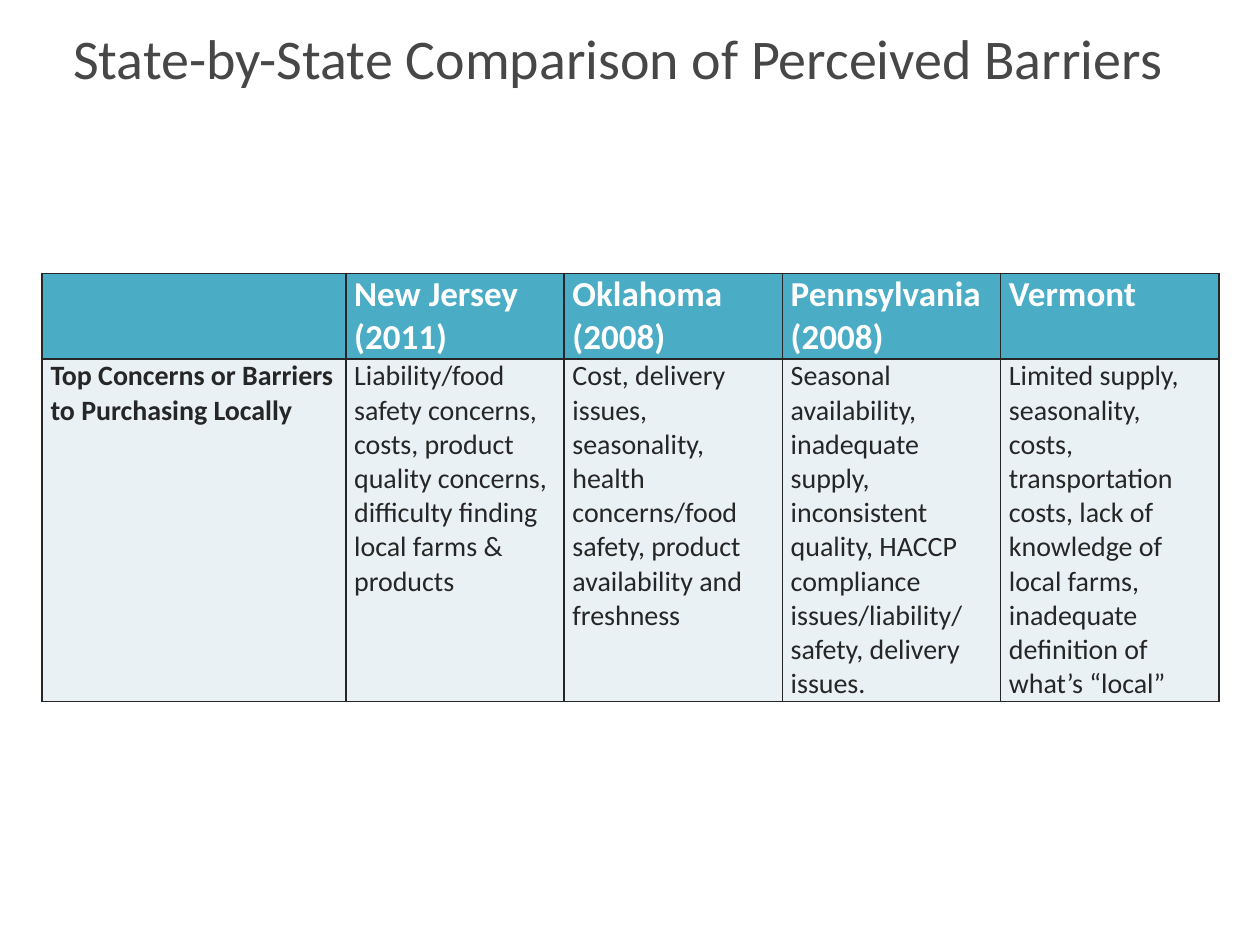
from lxml.etree import SubElement as Sub
from pptx import Presentation
from pptx.dml.color import RGBColor
from pptx.enum.text import MSO_ANCHOR as Anchor, PP_ALIGN as Align
from pptx.oxml.ns import qn
from pptx.util import Cm, Pt

TITLE = "State-by-State Comparison of Perceived Barriers"
HEADS = ["", "New Jersey (2011)", "Oklahoma (2008)", "Pennsylvania (2008)", "Vermont"]
BODY = [
    "Top Concerns or Barriers to Purchasing Locally",
    "Liability/food safety concerns, costs, product quality concerns, "
    "difficulty finding local farms & products",
    "Cost, delivery issues, seasonality, health concerns/food safety, "
    "product availability and freshness",
    "Seasonal availability, inadequate supply, inconsistent quality, "
    "HACCP compliance issues/liability/\nsafety, delivery issues.",
    "Limited supply, seasonality, costs, transportation costs, lack of knowledge "
    "of local farms, inadequate definition of what’s “local”",
]
ROWS = [
    dict(texts=HEADS, high=1.72, fill="4BACC6", ink="FFFFFF", size=20, bold=5),
    dict(texts=BODY, high=6.9, fill="E9F1F5", ink="262626", size=16, bold=1),
]
WIDTHS = [6.12] + [4.4] * 4
EDGE = "262626"


def paint(format, color):
    format.fill.solid()
    format.fill.fore_color.rgb = RGBColor.from_string(color)


def write(frame, text, size, color, bold=False):
    for i, line in enumerate(text.split("\n")):
        para = frame.add_paragraph() if i else frame.paragraphs[0]
        para.alignment = Align.LEFT
        para.font.size = Pt(size)
        run = para.add_run()
        run.text = line
        font = run.font
        font.name, font.size, font.bold = "Calibri", Pt(size), bold
        font.color.rgb = RGBColor.from_string(color)


def border(cell):
    props = cell._tc.get_or_add_tcPr()
    for side in ("lnL", "lnR", "lnT", "lnB"):
        line = Sub(props, qn("a:" + side), w=str(Pt(1)))
        Sub(Sub(line, qn("a:solidFill")), qn("a:srgbClr"), val=EDGE)


def main():
    """Build the slide comparing purchasing barriers by state."""
    deck = Presentation()
    deck.slide_width, deck.slide_height = Cm(25.4), Cm(19.05)
    slide = deck.slides.add_slide(deck.slide_layouts[5])

    title = slide.shapes.title
    title.left, title.top, title.width, title.height = Cm(1.22), Cm(0.2), Cm(23.34), Cm(1.9)
    title.text_frame.vertical_anchor = Anchor.MIDDLE
    write(title.text_frame, TITLE, 32, "474747")

    high = sum(row["high"] for row in ROWS)
    table = slide.shapes.add_table(
        len(ROWS), len(WIDTHS), Cm(0.85), Cm(5.51), Cm(sum(WIDTHS)), Cm(high)
    ).table
    for col, width in zip(table.columns, WIDTHS):
        col.width = Cm(width)
    for r, row in enumerate(ROWS):
        table.rows[r].height = Cm(row["high"])
        for c, text in enumerate(row["texts"]):
            cell = table.cell(r, c)
            cell.margin_left = cell.margin_right = Cm(0.17)
            cell.margin_top = cell.margin_bottom = 0
            border(cell)
            paint(cell, row["fill"])
            if text:
                write(cell.text_frame, text, row["size"], row["ink"], c < row["bold"])
    deck.save("out.pptx")


if __name__ == "__main__":
    main()
